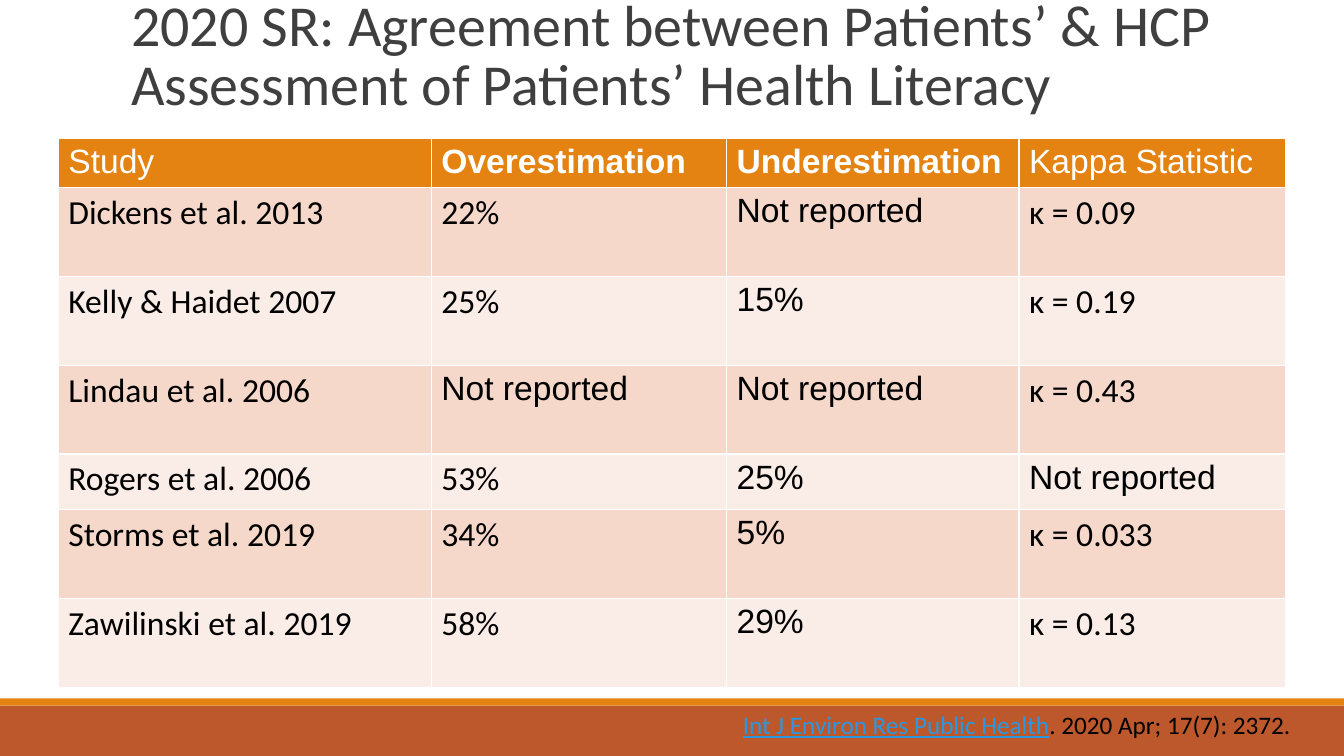
import pptx
import pptx.dml.color
import pptx.enum.shapes
import pptx.enum.text
import pptx.util
from dataclasses import dataclass

Cm, Pt = pptx.util.Cm, pptx.util.Pt


@dataclass(frozen=True)
class Theme:
    heading_font: str = "Calibri"
    table_font: str = "Arial"
    title_size: float = 41.4
    table_size: float = 24
    citation_size: float = 18
    title: str = "3F3F3F"
    text: str = "000000"
    white: str = "FFFFFF"
    link: str = "2998E3"
    orange: str = "E48312"
    rust: str = "BD582C"
    row_fills: tuple = ("F5D8CA", "FAECE6")


def rgb(value):
    return pptx.dml.color.RGBColor.from_string(value)


class SlideBuilder:
    def __init__(self, slide, theme):
        self.slide = slide
        self.theme = theme

    def style(self, font, name, size, color, bold=False):
        font.name, font.size, font.bold = name, Pt(size), bold
        font.color.rgb = rgb(color)

    def title(self, text, left, top, width, height, bottom_inset):
        heading = self.slide.shapes.title
        heading.left, heading.top = Cm(left), Cm(top)
        heading.width, heading.height = Cm(width), Cm(height)
        frame = heading.text_frame
        frame.text = text
        frame.word_wrap = True
        frame.auto_size = pptx.enum.text.MSO_AUTO_SIZE.NONE
        frame.vertical_anchor = pptx.enum.text.MSO_ANCHOR.BOTTOM
        frame.margin_bottom = Cm(bottom_inset)
        paragraph = frame.paragraphs[0]
        paragraph.alignment = pptx.enum.text.PP_ALIGN.LEFT
        paragraph.line_spacing = 0.85
        self.style(paragraph.font, self.theme.heading_font,
                   self.theme.title_size, self.theme.title)

    def band(self, top, height, color):
        band = self.slide.shapes.add_shape(
            pptx.enum.shapes.MSO_SHAPE.RECTANGLE,
            0, Cm(top), Cm(33.87), Cm(height))
        band.shadow.inherit = False
        band.fill.solid()
        band.fill.fore_color.rgb = rgb(color)
        band.line.fill.background()

    def cell(self, cell, text, font, color, fill, bold=False):
        cell.text = text
        cell.fill.solid()
        cell.fill.fore_color.rgb = rgb(fill)
        self.style(cell.text_frame.paragraphs[0].font, font,
                   self.theme.table_size, color, bold)

    def table(self, headers, rows, left, top, widths, heights):
        theme = self.theme
        table = self.slide.shapes.add_table(
            len(rows) + 1, len(headers), Cm(left), Cm(top),
            Cm(sum(widths)), Cm(sum(heights))).table
        for column, width in zip(table.columns, widths):
            column.width = Cm(width)
        for row, height in zip(table.rows, heights):
            row.height = Cm(height)
        for c, (label, bold) in enumerate(headers):
            self.cell(table.cell(0, c), label, theme.table_font,
                      theme.white, theme.orange, bold)
        for r, values in enumerate(rows):
            for c, value in enumerate(values):
                # Underestimation and missing values use the table font
                in_table_font = c == 2 or value == NOT_REPORTED
                font = theme.table_font if in_table_font else theme.heading_font
                self.cell(table.cell(r + 1, c), value, font,
                          theme.text, theme.row_fills[r % 2])

    def citation(self, journal, details, left, top, width, height):
        box = self.slide.shapes.add_textbox(
            Cm(left), Cm(top), Cm(width), Cm(height))
        box.text_frame.word_wrap = True
        paragraph = box.text_frame.paragraphs[0]
        for text, color, underline in ((journal, self.theme.link, True),
                                       (details, self.theme.text, False)):
            run = paragraph.add_run()
            run.text = text
            self.style(run.font, self.theme.heading_font,
                       self.theme.citation_size, color)
            run.font.underline = underline


NOT_REPORTED = "Not reported"
HEADERS = [("Study", False), ("Overestimation", True),
           ("Underestimation", True), ("Kappa Statistic", False)]
STUDIES = [
    ("Dickens et al. 2013", "22%", NOT_REPORTED, "κ = 0.09"),
    ("Kelly & Haidet 2007", "25%", "15%", "κ = 0.19"),
    ("Lindau et al. 2006", NOT_REPORTED, NOT_REPORTED, "κ = 0.43"),
    ("Rogers et al. 2006", "53%", "25%", NOT_REPORTED),
    ("Storms et al. 2019", "34%", "5%", "κ = 0.033"),
    ("Zawilinski et al. 2019", "58%", "29%", "κ = 0.13"),
]


def main():
    theme = Theme()
    deck = pptx.Presentation()
    deck.slide_width, deck.slide_height = Cm(33.87), Cm(19.05)
    builder = SlideBuilder(deck.slides.add_slide(deck.slide_layouts[5]), theme)

    # Footer bands
    builder.band(17.78, 1.27, theme.rust)
    builder.band(17.6, 0.18, theme.orange)

    # Title
    builder.title("2020 SR: Agreement between Patients’ & HCP "
                  "Assessment of Patients’ Health Literacy",
                  3.05, 0.79, 27.94, 4.04, bottom_inset=1.87)

    # Studies, with a shorter row for Rogers
    tall, short = 2.24, 1.4
    builder.table(HEADERS, STUDIES, 1.47, 3.48,
                  widths=[9.4, 7.44, 7.37, 6.73],
                  heights=[1.24, tall, tall, tall, short, tall, tall])

    # Citation
    builder.citation("Int J Environ Res Public Health",
                     ". 2020 Apr; 17(7): 2372.", 18.47, 17.75, 15.4, 0.71)

    deck.save("out.pptx")


if __name__ == "__main__":
    main()
